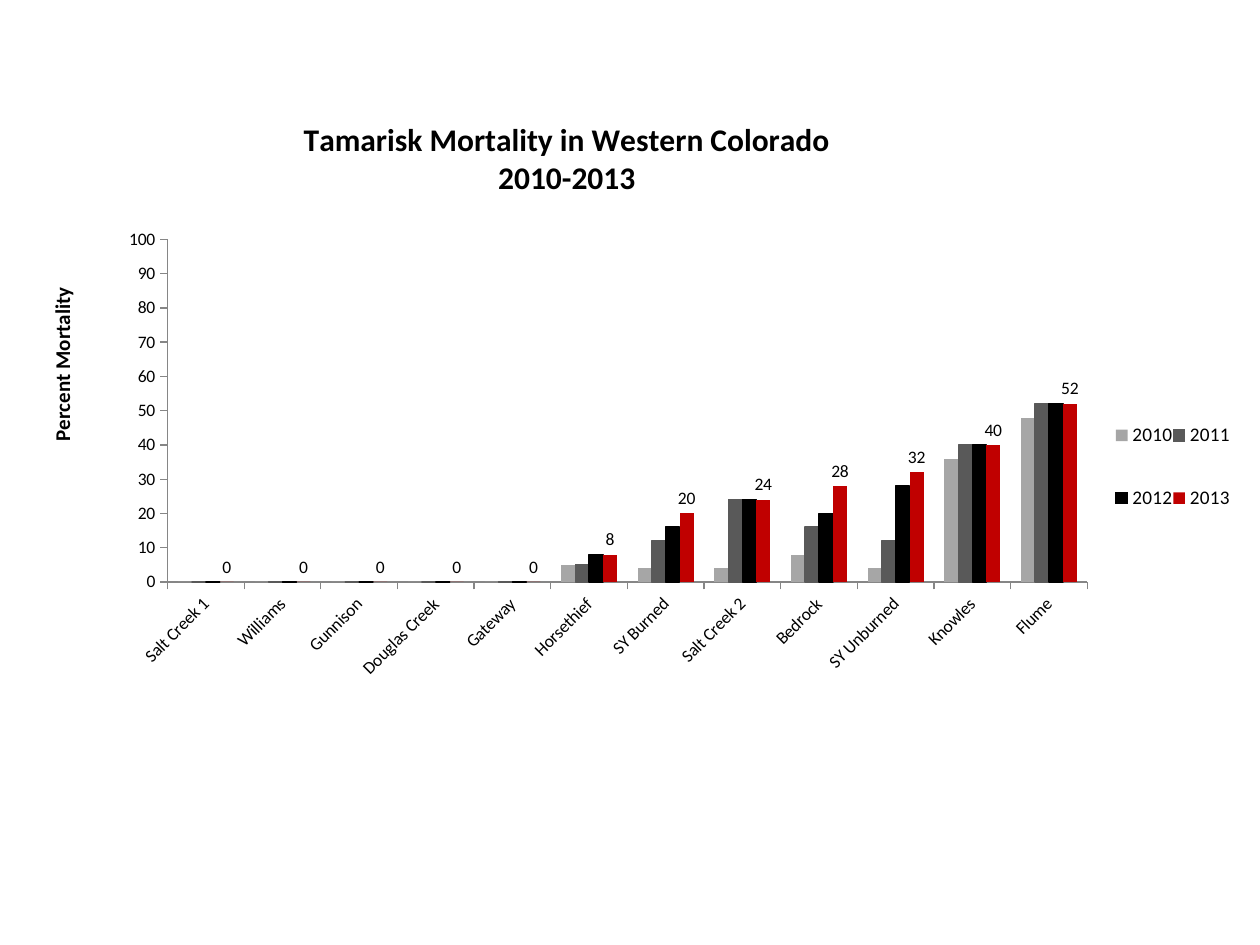
import lxml.etree
import pptx
import pptx.chart.data
import pptx.dml.color
import pptx.enum.chart
import pptx.oxml
import pptx.oxml.ns
import pptx.util

SLIDE_WIDTH, SLIDE_HEIGHT = 10, 7.5
CHART_LEFT, CHART_TOP, CHART_WIDTH, CHART_HEIGHT = 0, 0.58, 10.17, 5.67
FONT = "Calibri"
INK, AXIS_GREY = "000000", "868686"

HEADING = ["Tamarisk Mortality in Western Colorado", "2010-2013"]
VALUE_TITLE = ["Percent Mortality"]
SITES = ["Salt Creek 1", "Williams", "Gunnison", "Douglas Creek", "Gateway", "Horsethief",
         "SY Burned", "Salt Creek 2", "Bedrock", "SY Unburned", "Knowles", "Flume"]
YEARS = [
    ("2010", "A6A6A6", None, [0, 0, 0, 0, 0, 5, 4, 4, 8, 4, 36, 48]),
    ("2011", "595959", 0.75, [0, 0, 0, 0, 0, 5, 12, 24, 16, 12, 40, 52]),
    ("2012", "000000", 0.75, [0, 0, 0, 0, 0, 8, 16, 24, 20, 28, 40, 52]),
    ("2013", "C00000", None, [0, 0, 0, 0, 0, 8, 20, 24, 28, 32, 40, 52]),
]
HEADING_AT = (2.38, 0.33)
VALUE_TITLE_AT = (0.35, 1.67)
PLOT_BOX = (1.33, 1.32, 7.3, 2.72)
LEGEND_BOX = (8.85, 2.47, 0.92, 1.31)


def color(value):
    return pptx.dml.color.RGBColor.from_string(value)


def apply(target, values):
    for name, value in values.items():
        setattr(target, name, value)


def style_font(font, size, bold=False):
    apply(font, {"name": FONT, "size": pptx.util.Pt(size), "bold": bold})
    font.color.rgb = color(INK)


def place(element, index, box, **modes):
    for old in element.findall(pptx.oxml.ns.qn("c:layout")):
        element.remove(old)
    layout = pptx.oxml.parse_xml(f"<c:layout {pptx.oxml.ns.nsdecls('c')}><c:manualLayout/></c:layout>")
    sides = (CHART_WIDTH, CHART_HEIGHT) * 2
    shares = {name: length / side for name, length, side in zip("xywh", box, sides)}
    for name, value in {**modes, "xMode": "edge", "yMode": "edge", **shares}.items():
        lxml.etree.SubElement(layout[0], pptx.oxml.ns.qn(f"c:{name}")).set("val", str(value))
    element.insert(index, layout)


def write_title(title, lines, size, corner):
    frame = title.text_frame
    for number, line in enumerate(lines):
        paragraph = frame.add_paragraph() if number else frame.paragraphs[0]
        run = paragraph.add_run()
        run.text = line
        style_font(run.font, size, True)
    place(title._element, 1, corner)
    return frame


deck = pptx.Presentation()
apply(deck, {"slide_width": pptx.util.Inches(SLIDE_WIDTH),
             "slide_height": pptx.util.Inches(SLIDE_HEIGHT)})
slide = deck.slides.add_slide(deck.slide_layouts[6])

mortality = pptx.chart.data.CategoryChartData(number_format="General")
mortality.categories = SITES
for year, _, _, percents in YEARS:
    mortality.add_series(year, percents)
chart_box = map(pptx.util.Inches, (CHART_LEFT, CHART_TOP, CHART_WIDTH, CHART_HEIGHT))
chart = slide.shapes.add_chart(
    pptx.enum.chart.XL_CHART_TYPE.COLUMN_CLUSTERED, *chart_box, mortality).chart
style_font(chart.font, 10)

write_title(chart.chart_title, HEADING, 18, HEADING_AT)
value_frame = write_title(chart.value_axis.axis_title, VALUE_TITLE, 12, VALUE_TITLE_AT)
value_frame._txBody.bodyPr.set("rot", "-5400000")

apply(chart.value_axis, {"minimum_scale": 0, "maximum_scale": 100, "major_unit": 10})
for axis in (chart.category_axis, chart.value_axis):
    apply(axis, {"has_major_gridlines": False,
                 "major_tick_mark": pptx.enum.chart.XL_TICK_MARK.OUTSIDE,
                 "minor_tick_mark": pptx.enum.chart.XL_TICK_MARK.NONE})
    axis.format.line.color.rgb = color(AXIS_GREY)
    style_font(axis.tick_labels.font, 10)
chart.category_axis._element.txPr.bodyPr.set("rot", "-2700000")

bars = chart.plots[0]
apply(bars, {"gap_width": 150, "overlap": 0, "vary_by_categories": False})
for series, (_, fill, outline, _) in zip(bars.series, YEARS):
    series.format.fill.solid()
    series.format.fill.fore_color.rgb = color(fill)
    if outline:
        series.format.line.color.rgb = color(fill)
        series.format.line.width = pptx.util.Pt(outline)
    else:
        series.format.line.fill.background()

latest = bars.series[-1].data_labels
apply(latest, {"show_value": True,
               "position": pptx.enum.chart.XL_LABEL_POSITION.OUTSIDE_END})
style_font(latest.font, 10)

chart.has_legend = True
apply(chart.legend, {"position": pptx.enum.chart.XL_LEGEND_POSITION.RIGHT,
                     "include_in_layout": False})
style_font(chart.legend.font, 11)
place(chart.legend._element, 1, LEGEND_BOX)
place(chart._chartSpace.chart.plotArea, 0, PLOT_BOX, layoutTarget="inner")

deck.save("out.pptx")
